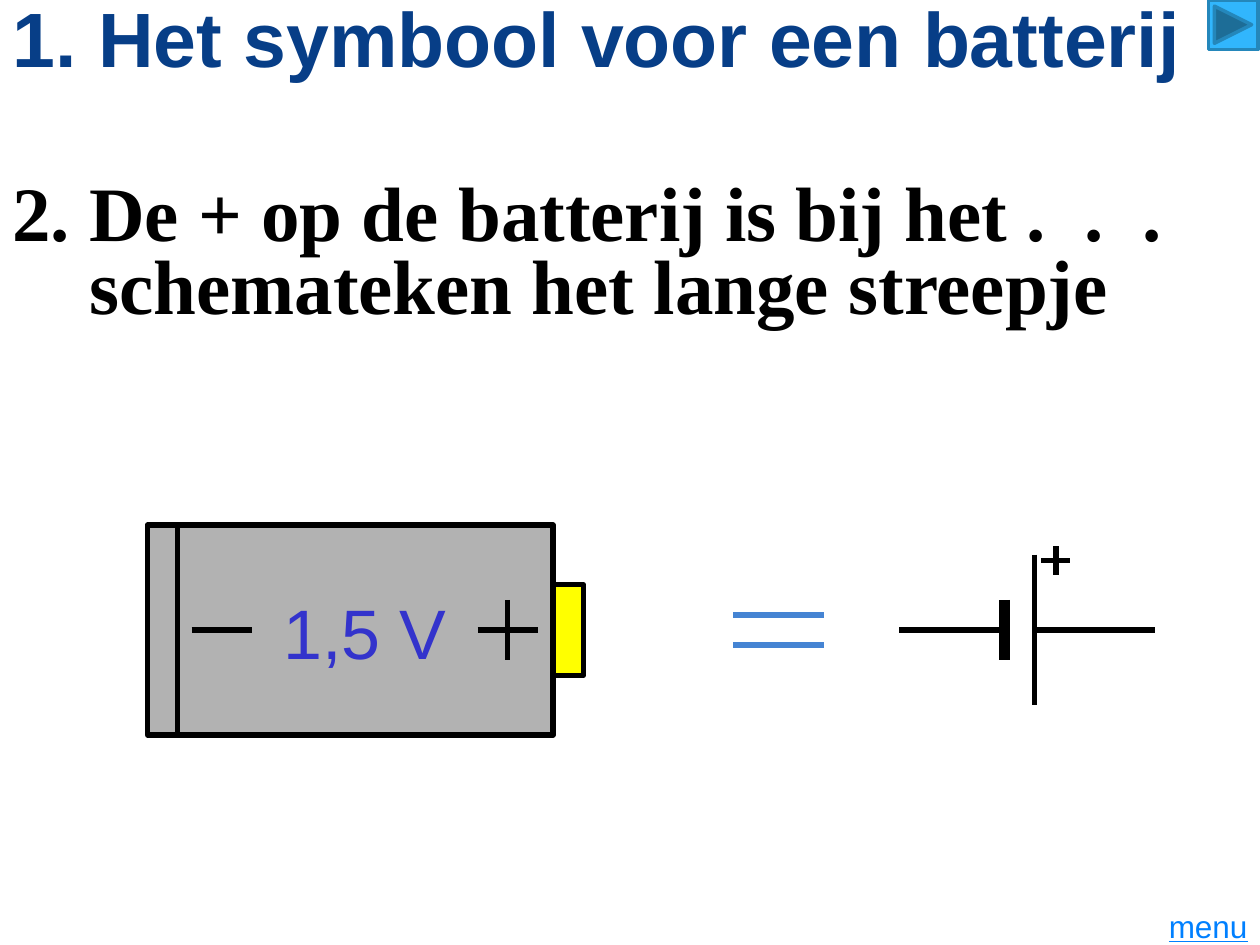
import pptx
import pptx.dml.color
import pptx.enum.shapes
import pptx.enum.text
import pptx.util
from lxml import etree

Pt = pptx.util.Pt
RGBColor = pptx.dml.color.RGBColor
Shape = pptx.enum.shapes.MSO_SHAPE
Align = pptx.enum.text.PP_ALIGN
Anchor = pptx.enum.text.MSO_ANCHOR

BLACK = RGBColor(0x00, 0x00, 0x00)
NAVY = RGBColor(0x07, 0x3E, 0x87)
INDIGO = RGBColor(0x33, 0x33, 0xCC)
LINK_BLUE = RGBColor(0x00, 0x80, 0xFF)
EQUALS_BLUE = RGBColor(0x45, 0x84, 0xD3)
GREY = RGBColor(0xB2, 0xB2, 0xB2)
YELLOW = RGBColor(0xFF, 0xFF, 0x00)
SKY = RGBColor(0x31, 0xB6, 0xFD)
STEEL = RGBColor(0x24, 0x87, 0xBB)


def write(box, text, size, color, font="Arial", bold=False, align=Align.LEFT):
    """Fill a text shape with one formatted, vertically centred paragraph."""
    frame = box.text_frame
    frame.word_wrap = True
    frame.auto_size = pptx.enum.text.MSO_AUTO_SIZE.NONE
    frame.vertical_anchor = Anchor.MIDDLE
    paragraph = frame.paragraphs[0]
    paragraph.text = text
    paragraph.alignment = align
    paragraph.font.name = font
    paragraph.font.size = Pt(size)
    paragraph.font.bold = bold
    paragraph.font.color.rgb = color
    return paragraph


def add_text(slide, left, top, width, height):
    """Add an empty text box."""
    return slide.shapes.add_textbox(Pt(left), Pt(top), Pt(width), Pt(height))


def add_line(slide, x1, y1, x2, y2, color=BLACK, weight=3):
    """Add a straight line without a shadow."""
    line = slide.shapes.add_connector(
        pptx.enum.shapes.MSO_CONNECTOR.STRAIGHT, Pt(x1), Pt(y1), Pt(x2), Pt(y2))
    line.line.color.rgb = color
    line.line.width = Pt(weight)
    etree.SubElement(line._element.spPr, pptx.oxml.ns.qn("a:effectLst"))


def add_plus(slide, x, y, arm):
    """Add a plus sign centred on a point."""
    add_line(slide, x, y - arm, x, y + arm)
    add_line(slide, x - arm, y, x + arm, y)


def add_block(slide, kind, left, top, width, height, fill, outline=BLACK, weight=3):
    """Add a filled and outlined preset shape."""
    block = slide.shapes.add_shape(kind, Pt(left), Pt(top), Pt(width), Pt(height))
    block.shadow.inherit = False
    block.fill.solid()
    block.fill.fore_color.rgb = fill
    block.line.color.rgb = outline
    block.line.width = Pt(weight)


def add_battery(slide, axis):
    """Draw the battery with its poles and voltage."""
    add_block(slide, Shape.RECTANGLE, 84.24, axis - 60, 231.84, 120, GREY)
    add_block(slide, Shape.RECTANGLE, 316.08, axis - 26, 17.28, 52, YELLOW)
    add_line(slide, 101.5, axis - 60, 101.5, axis + 60)
    add_plus(slide, 290.2, axis, 17.2)
    add_line(slide, 109.5, axis, 144, axis)
    voltage = add_text(slide, 145.5, axis - 27, 126, 55.5)
    write(voltage, "1,5 V", 40, INDIGO, align=Align.CENTER)


def add_symbol(slide, axis):
    """Draw the circuit symbol of the battery."""
    short_plate, long_plate = 574, 591.2
    add_plus(slide, 603.4, axis - 39.6, 8.3)
    add_line(slide, 514, axis, short_plate, axis)
    add_line(slide, short_plate, axis - 17.2, short_plate, axis + 17.2, weight=6)
    add_line(slide, long_plate, axis, 660, axis)
    add_line(slide, long_plate, axis - 43, long_plate, axis + 43)


def main():
    """Build the slide and save it."""
    deck = pptx.Presentation()
    deck.slide_width, deck.slide_height = Pt(720), Pt(540)
    slide = deck.slides.add_slide(deck.slide_layouts[5])
    axis = 360

    title = slide.shapes.title
    title.left, title.top, title.width, title.height = Pt(0), Pt(0), Pt(720), Pt(41.8)
    write(title, "1. Het symbool voor een batterij", 44, NAVY, bold=True)

    rule = add_text(slide, 0, 102.2, 720, 36)
    write(rule, "2. De + op de batterij is bij het .  .  .", 44, BLACK,
          "Times New Roman", True)
    rule_end = add_text(slide, 0, 138.2, 720, 48.2)
    write(rule_end, "schemateken het lange streepje", 44, BLACK,
          "Times New Roman", True)
    rule_end.text_frame.margin_left = Pt(51.2)

    add_symbol(slide, axis)
    for offset in (-8.6, 8.6):
        add_line(slide, 419, axis + offset, 471, axis + offset, EQUALS_BLUE)
    add_battery(slide, axis)

    menu = add_text(slide, 652.3, 517.7, 67.7, 22.3)
    write(menu, "menu", 18, LINK_BLUE, align=Align.RIGHT).font.underline = True
    add_block(slide, Shape.ACTION_BUTTON_FORWARD_OR_NEXT,
              690.5, 0, 28.3, 28.3, SKY, STEEL, 2)
    deck.save("out.pptx")


if __name__ == "__main__":
    main()
